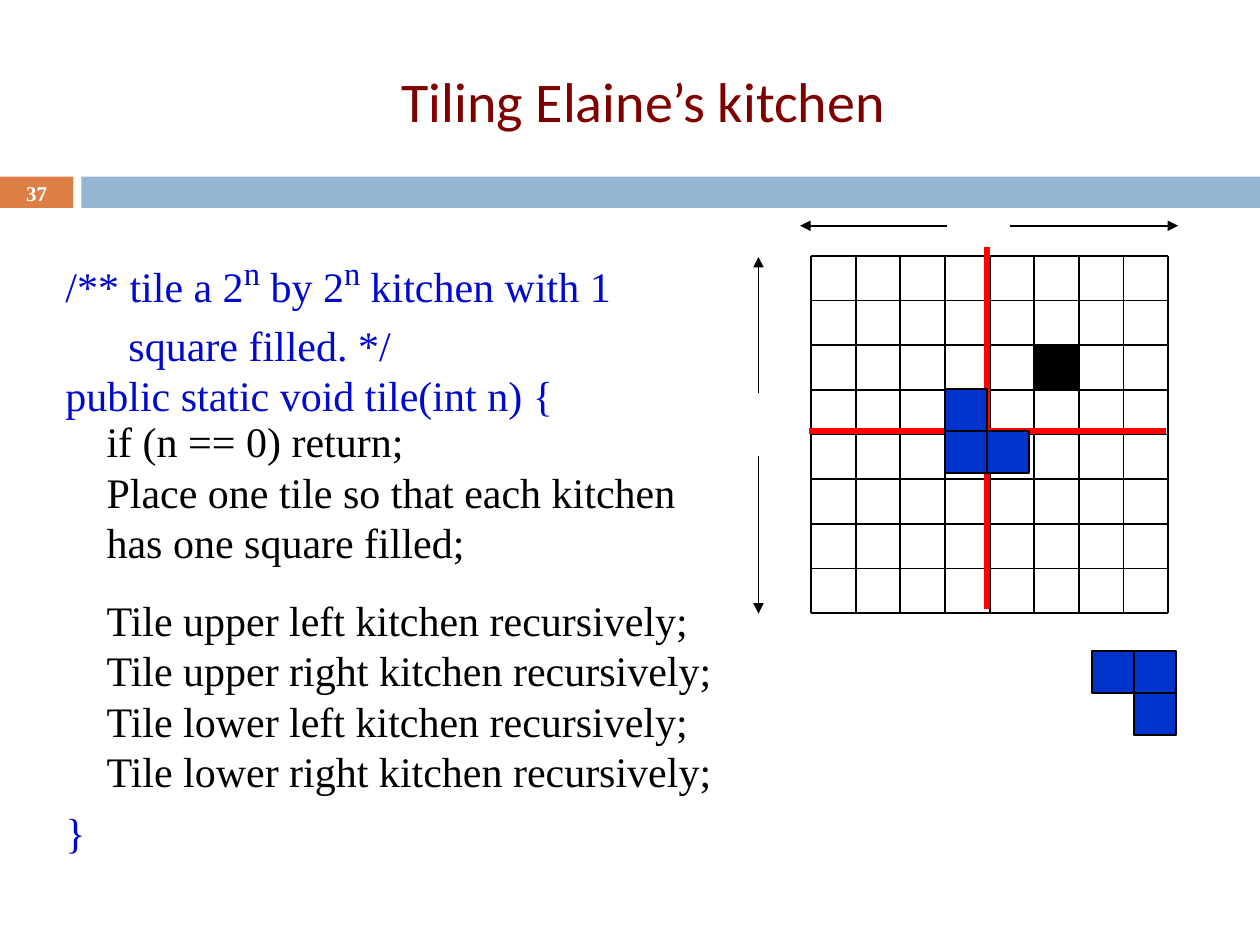
from dataclasses import dataclass

from lxml import etree
from pptx import Presentation
from pptx import util as u
from pptx.dml.color import RGBColor
from pptx.enum import shapes, text
from pptx.oxml import ns


@dataclass(frozen=True)
class Theme:
    orange: str = "DD8047"
    band: str = "94B6D2"
    maroon: str = "800000"
    white: str = "FFFFFF"
    black: str = "000000"
    code_blue: str = "0009CC"
    tile_blue: str = "0033CC"
    red: str = "FF0000"
    heading_font: str = "Calibri"
    body_font: str = "Times New Roman"
    heading: int = 32
    body: int = 24
    exponent: int = 32
    number: int = 12
    thin: int = 1
    thick: int = 3


class Board:
    """Holds the theme and the slide being drawn."""

    def __init__(self, slide, theme):
        self.slide = slide
        self.theme = theme

    def rect(self, left, top, width, height, fill, outline=None, parent=None):
        box = (parent or self.slide).shapes.add_shape(
            shapes.MSO_SHAPE.RECTANGLE, *map(u.Cm, (left, top, width, height)))
        box.shadow.inherit = False
        box.fill.solid()
        box.fill.fore_color.rgb = RGBColor.from_string(fill)
        if outline:
            box.line.color.rgb = RGBColor.from_string(outline)
            box.line.width = u.Pt(self.theme.thin)
        else:
            box.line.fill.background()
        return box

    def line(self, start, end, color=None, width=None, arrow=False):
        stroke = self.slide.shapes.add_connector(
            shapes.MSO_CONNECTOR.STRAIGHT, *map(u.Cm, (*start, *end)))
        stroke.line.color.rgb = RGBColor.from_string(color or self.theme.black)
        stroke.line.width = u.Pt(width or self.theme.thin)
        if arrow:
            etree.SubElement(stroke.line._get_or_add_ln(),
                             ns.qn("a:tailEnd"), type="triangle")
        etree.SubElement(stroke._element.spPr, ns.qn("a:effectLst"))

    def text(self, left, top, width, height, paragraphs, color, size=None,
             font=None, bold=False, centred=False, wrap=True):
        """Each paragraph is a list of (words, is_exponent) or a plain string."""
        box = self.slide.shapes.add_textbox(
            *map(u.Cm, (left, top, width, height)))
        frame = box.text_frame
        frame.word_wrap = wrap
        if centred:
            frame.vertical_anchor = text.MSO_ANCHOR.MIDDLE
        for index, content in enumerate(paragraphs):
            paragraph = frame.paragraphs[0] if index == 0 else frame.add_paragraph()
            if centred:
                paragraph.alignment = text.PP_ALIGN.CENTER
            pieces = [(content, False)] if isinstance(content, str) else content
            for words, is_exponent in pieces:
                run = paragraph.add_run()
                run.text = words
                run.font.name = font or self.theme.body_font
                run.font.size = u.Pt(size or self.theme.body)
                run.font.bold = bold
                run.font.color.rgb = RGBColor.from_string(color)
                if is_exponent:
                    run.font.size = u.Pt(self.theme.exponent)
                    run._r.get_or_add_rPr().set("baseline", "30000")
        return frame

    def tromino(self, left, top, cells, side=0.85):
        group = self.slide.shapes.add_group_shape()
        for column, row in cells:
            self.rect(left + column * side, top + row * side, side, side,
                      self.theme.tile_blue, self.theme.black, group)

    def grid(self, left, top, cell, count):
        far = cell * count
        for step in range(count + 1):
            offset = step * cell
            self.line((left + offset, top), (left + offset, top + far))
            self.line((left, top + offset), (left + far, top + offset))


def main():
    theme = Theme()
    deck = Presentation()
    deck.slide_width, deck.slide_height = u.Cm(25.4), u.Cm(19.05)
    board = Board(deck.slides.add_slide(deck.slide_layouts[6]), theme)

    # Header band, title and slide number
    board.rect(0, 3.56, 1.48, 0.63, theme.orange)
    board.rect(1.64, 3.56, 23.76, 0.63, theme.band)
    title = board.text(1.7, 0.64, 22.65, 2.75, ["Tiling Elaine’s kitchen"],
                       theme.maroon, theme.heading, theme.heading_font,
                       centred=True)
    title.margin_right = u.Cm(0.35)
    number = board.text(0, 3.6, 1.48, 0.69, ["37"], theme.white, theme.number,
                        bold=True, centred=True)
    number.paragraphs[0].line_spacing = 0.8

    # Kitchen floor with its filled square
    left, top, cell = 16.35, 5.16, 0.9
    board.grid(left, top, cell, 8)
    board.rect(left + 5 * cell, top + 2 * cell, cell, cell, theme.black)

    # Dimension arrows
    for start, end in (((19.1, 4.55), (16.13, 4.55)),
                       ((20.37, 4.55), (23.75, 4.55)),
                       ((15.29, 7.92), (15.29, 5.18)),
                       ((15.29, 9.2), (15.29, 12.37))):
        board.line(start, end, arrow=True)

    # Method comment, header and closing brace
    method = board.text(1.07, 4.85, 12.5, 12.47, [
        [("/** tile a 2", False), ("n", True), (" by 2", False), ("n", True),
         (" kitchen with 1", False)],
        "square filled. */",
        "public static void tile(int n) {",
        "}"], theme.code_blue)
    for paragraph, gap in zip(method.paragraphs, (3, 3, 0, 221)):
        paragraph.space_before = u.Pt(gap)
    method.paragraphs[1]._p.get_or_add_pPr().set("marL", str(u.Cm(1.27)))

    # Method body
    board.text(1.9, 8.26, 12.9, 5.38, [
        "if (n == 0) return;",
        "Place one tile so that each kitchen has one square filled;"],
        theme.black)
    board.text(1.9, 11.86, 12.83, 5.38,
               [f"Tile {corner} kitchen recursively;" for corner in
                ("upper left", "upper right", "lower left", "lower right")],
               theme.black, wrap=False)

    # Quadrant lines and the two L-shaped tiles
    centre_x, centre_y = 19.9, 8.69
    board.line((centre_x, 12.27), (centre_x, 4.98), theme.red, theme.thick)
    board.line((23.5, centre_y), (16.3, centre_y), theme.red, theme.thick)
    board.tromino(19.05, 7.84, ((0, 0), (0, 1), (1, 1)))
    board.tromino(22.01, 13.12, ((1, 1), (1, 0), (0, 0)))

    deck.save("out.pptx")


if __name__ == "__main__":
    main()
